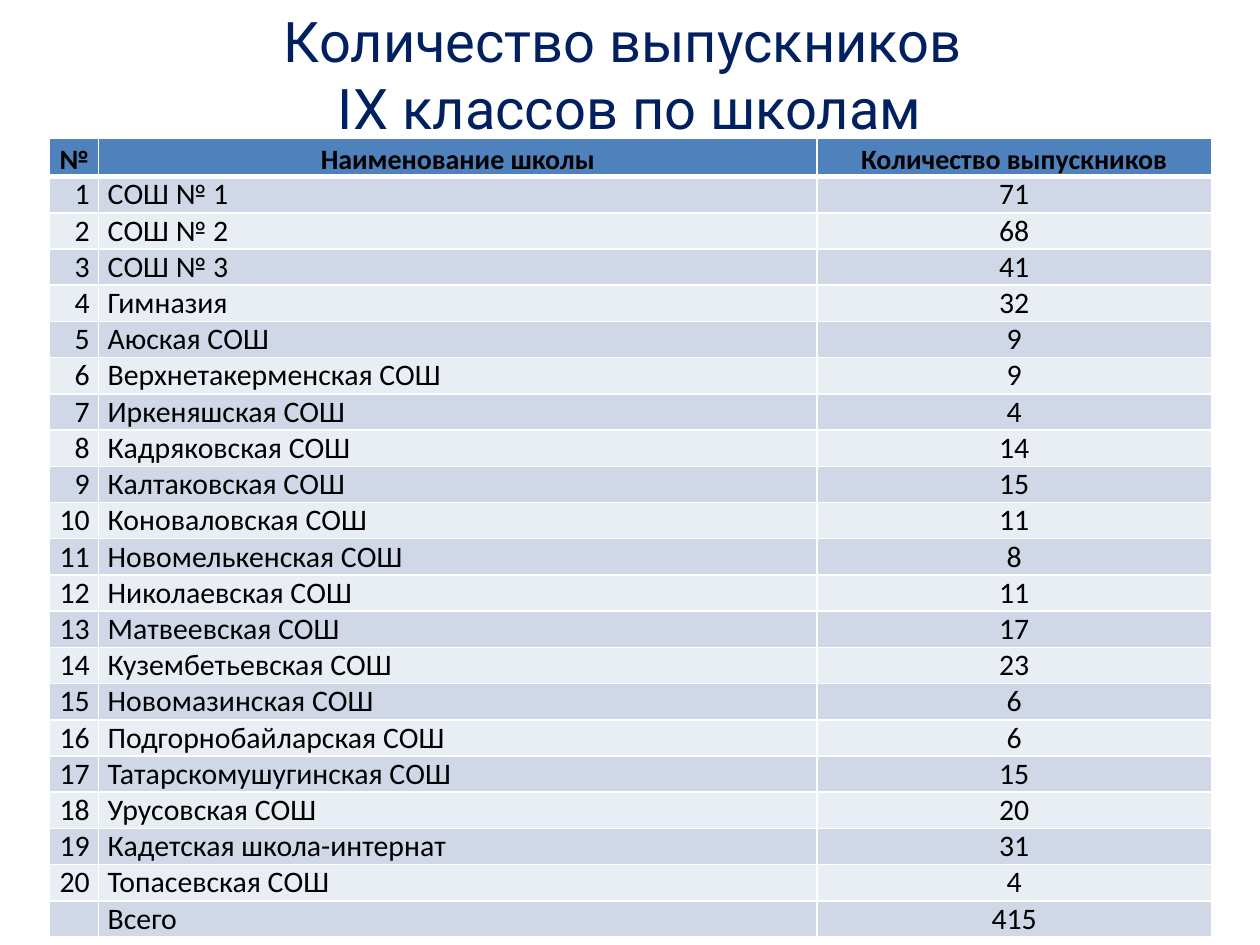
from dataclasses import dataclass

from lxml.etree import SubElement
from pptx import Presentation
from pptx.dml.color import RGBColor
from pptx.enum.text import MSO_ANCHOR as Anchor, PP_ALIGN as Align
from pptx.oxml.ns import qn
from pptx.util import Cm, Pt

NAVY = RGBColor(0x00, 0x20, 0x60)
BLACK = RGBColor(0x00, 0x00, 0x00)
WHITE = RGBColor(0xFF, 0xFF, 0xFF)
HEADER_BLUE = RGBColor(0x4F, 0x81, 0xBD)
BANDS = (RGBColor(0xE9, 0xED, 0xF4), RGBColor(0xD0, 0xD8, 0xE8))
TABLE_FONT = "Calibri"
HEADER_HEIGHT = Cm(0.78)
ROW_HEIGHT = Cm(0.73)


@dataclass(frozen=True)
class Column:
    heading: str
    width: Cm
    align: Align


@dataclass(frozen=True)
class School:
    name: str
    graduates: int


@dataclass(frozen=True)
class RowStyle:
    fill: RGBColor
    size: int
    bold: bool
    top: int = 1
    bottom: int = 1


COLUMNS = (
    Column("№", Cm(0.99), Align.RIGHT),
    Column("Наименование школы", Cm(14.48), Align.LEFT),
    Column("Количество выпускников", Cm(7.95), Align.CENTER),
)

SCHOOLS = (
    School("СОШ № 1", 71),
    School("СОШ № 2", 68),
    School("СОШ № 3", 41),
    School("Гимназия", 32),
    School("Аюская СОШ", 9),
    School("Верхнетакерменская СОШ", 9),
    School("Иркеняшская СОШ", 4),
    School("Кадряковская СОШ", 14),
    School("Калтаковская СОШ", 15),
    School("Коноваловская СОШ", 11),
    School("Новомелькенская СОШ", 8),
    School("Николаевская СОШ", 11),
    School("Матвеевская СОШ", 17),
    School("Кузембетьевская СОШ", 23),
    School("Новомазинская СОШ", 6),
    School("Подгорнобайларская СОШ", 6),
    School("Татарскомушугинская СОШ", 15),
    School("Урусовская СОШ", 20),
    School("Кадетская школа-интернат", 31),
    School("Топасевская СОШ", 4),
)


def add_run(paragraph, text: str, font: str, size: int, color: RGBColor, bold: bool = False) -> None:
    run = paragraph.add_run()
    run.text = text
    run.font.name = font
    run.font.size = Pt(size)
    run.font.bold = bold
    run.font.color.rgb = color


def add_title(slide, lines: tuple[str, ...]) -> None:
    shape = slide.shapes.add_textbox(Cm(0), Cm(0.4), Cm(25.4), Cm(2.18))
    frame = shape.text_frame
    frame.word_wrap = True
    frame.vertical_anchor = Anchor.MIDDLE
    paragraph = frame.paragraphs[0]
    paragraph.alignment = Align.CENTER
    for index, line in enumerate(lines):
        if index:
            paragraph.add_line_break()
        add_run(paragraph, line, "Roboto", 32, NAVY)


def set_borders(cell, style: RowStyle) -> None:
    properties = cell._tc.get_or_add_tcPr()
    for side, width in (("L", 1), ("R", 1), ("T", style.top), ("B", style.bottom)):
        line = SubElement(properties, qn(f"a:ln{side}"), w=str(Pt(width)))
        fill = SubElement(line, qn("a:solidFill"))
        SubElement(fill, qn("a:srgbClr"), val=str(WHITE))


def fill_cell(cell, text: str, align: Align, style: RowStyle) -> None:
    set_borders(cell, style)
    cell.fill.solid()
    cell.fill.fore_color.rgb = style.fill
    cell.vertical_anchor = Anchor.BOTTOM
    cell.margin_left = cell.margin_right = Cm(0.18)
    cell.margin_top = cell.margin_bottom = Cm(0)
    paragraph = cell.text_frame.paragraphs[0]
    paragraph.alignment = align
    if text:
        add_run(paragraph, text, TABLE_FONT, style.size, BLACK, style.bold)
    else:
        SubElement(paragraph._p, qn("a:endParaRPr"), sz=str(style.size * 100))


def add_school_table(slide) -> None:
    records = [(str(number), school.name, str(school.graduates))
               for number, school in enumerate(SCHOOLS, 1)]
    records.append(("", "Всего", str(sum(school.graduates for school in SCHOOLS))))
    width = sum(column.width for column in COLUMNS)
    height = HEADER_HEIGHT + ROW_HEIGHT * len(records)
    table = slide.shapes.add_table(
        len(records) + 1, len(COLUMNS), Cm(1), Cm(2.78), width, height).table
    table.rows[0].height = HEADER_HEIGHT
    header_style = RowStyle(HEADER_BLUE, 16, True, bottom=3)
    for index, column in enumerate(COLUMNS):
        table.columns[index].width = column.width
        fill_cell(table.cell(0, index), column.heading, Align.CENTER, header_style)
    for row, record in enumerate(records, 1):
        table.rows[row].height = ROW_HEIGHT
        style = RowStyle(BANDS[row % 2], 17, False, top=3 if row == 1 else 1)
        for index, (column, text) in enumerate(zip(COLUMNS, record)):
            fill_cell(table.cell(row, index), text, column.align, style)


def main() -> None:
    presentation = Presentation()
    presentation.slide_width = Cm(25.4)
    presentation.slide_height = Cm(19.05)
    slide = presentation.slides.add_slide(presentation.slide_layouts[6])
    add_title(slide, ("Количество выпускников ", "IX классов по школам"))
    add_school_table(slide)
    presentation.save("out.pptx")


if __name__ == "__main__":
    main()
